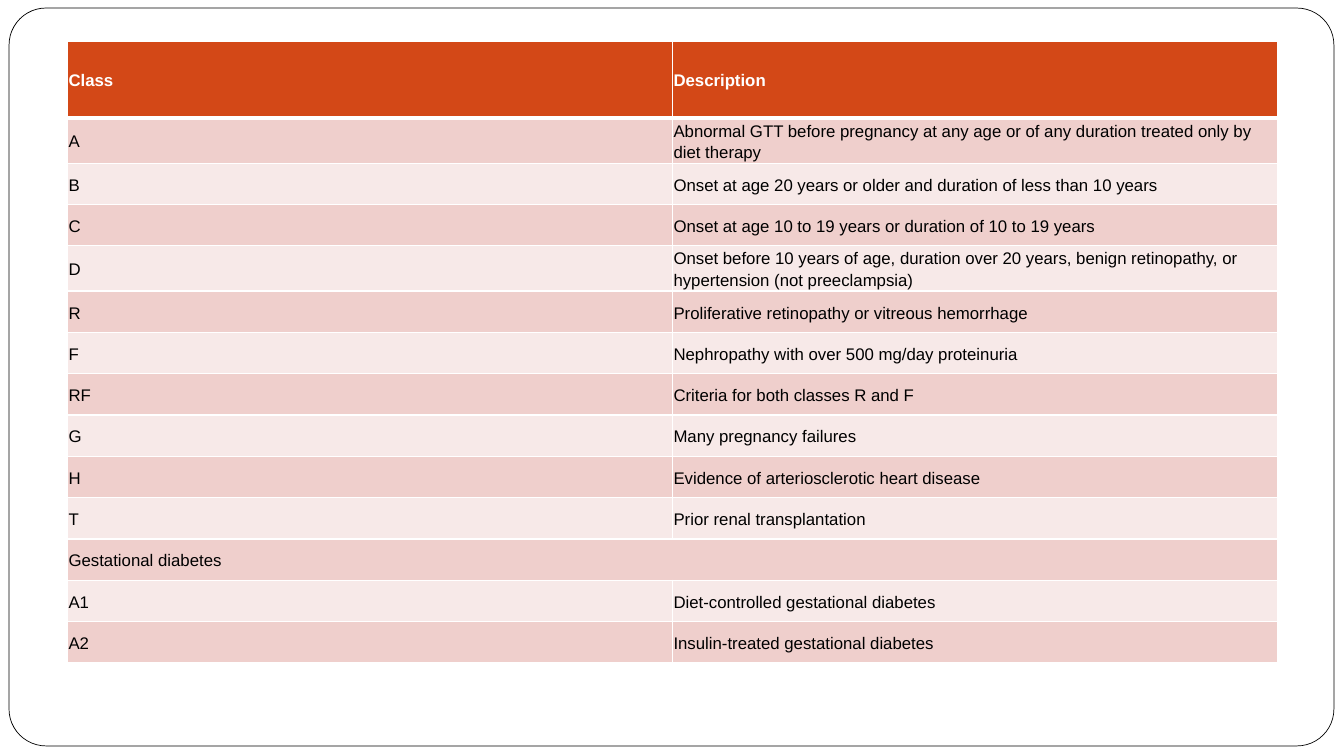
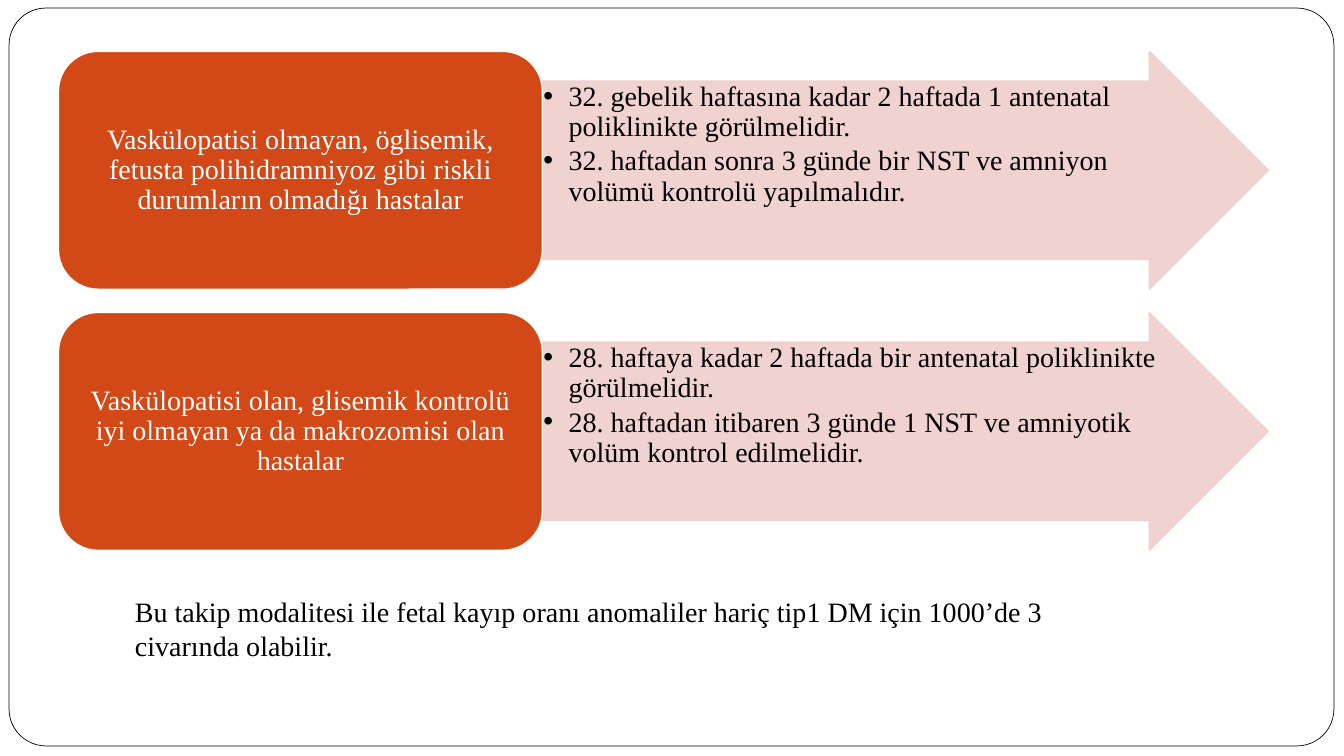
from lxml.etree import SubElement
from pptx import Presentation
from pptx.dml.color import RGBColor
from pptx.enum.shapes import MSO_SHAPE
from pptx.enum.text import MSO_ANCHOR, PP_ALIGN
from pptx.oxml.ns import qn
from pptx.util import Pt

PX = 9144  # EMU per px, 100 px to the inch
SLIDE_W, SLIDE_H = 1333, 750

ORANGE = RGBColor(0xD3, 0x48, 0x17)
PINK = RGBColor(0xEF, 0xCF, 0xCC)
PALE = RGBColor(0xF7, 0xE9, 0xE8)
WHITE = RGBColor(0xFF, 0xFF, 0xFF)
BLACK = RGBColor(0, 0, 0)
SANS, SERIF = "Arial", "Times New Roman"

HEADER = ("Class", "Description")
CLASSES = [
    ("A", "Abnormal GTT before pregnancy at any age or of any duration treated only by diet therapy"),
    ("B", "Onset at age 20 years or older and duration of less than 10 years"),
    ("C", "Onset at age 10 to 19 years or duration of 10 to 19 years"),
    ("D", "Onset before 10 years of age, duration over 20 years, benign retinopathy, "
          "or hypertension (not preeclampsia)"),
    ("R", "Proliferative retinopathy or vitreous hemorrhage"),
    ("F", "Nephropathy with over 500 mg/day proteinuria"),
    ("RF", "Criteria for both classes R and F"),
    ("G", "Many pregnancy failures"),
    ("H", "Evidence of arteriosclerotic heart disease"),
    ("T", "Prior renal transplantation"),
    ("Gestational diabetes",),
    ("A1", "Diet-controlled gestational diabetes"),
    ("A2", "Insulin-treated gestational diabetes"),
]

FOLLOW_UP = [
    ("Vaskülopatisi olmayan, öglisemik, fetusta polihidramniyoz gibi riskli "
     "durumların olmadığı hastalar",
     ["32. gebelik haftasına kadar 2 haftada 1 antenatal poliklinikte görülmelidir.",
      "32. haftadan sonra 3 günde bir NST ve amniyon volümü kontrolü yapılmalıdır."]),
    ("Vaskülopatisi olan, glisemik kontrolü iyi olmayan ya da makrozomisi olan hastalar",
     ["28. haftaya kadar 2 haftada bir antenatal poliklinikte görülmelidir.",
      "28. haftadan itibaren 3 günde 1 NST ve amniyotik volüm kontrol edilmelidir."]),
]
OUTCOME = ("Bu takip modalitesi ile fetal kayıp oranı anomaliler hariç tip1 DM için "
           "1000’de 3 civarında olabilir.")

TABLE_X, TABLE_Y, COL_W = 67, 41, 600
HEADER_H, ROW_H = 76, 41
GROUP_X, GROUP_Y, GROUP_H, GROUP_STEP = 58, 51, 236, 259
BOX_W, ARROW_W = 480, 720


def px(*lengths):
    return [n * PX for n in lengths]


def add_run(p, text, font, size, color, bold=False):
    r = p.add_run()
    r.text = text
    r.font.name, r.font.size, r.font.bold = font, Pt(size), bold
    r.font.color.rgb = color


def set_margins(target, x, y):
    target.margin_left = target.margin_right = x * PX
    target.margin_top = target.margin_bottom = y * PX


def add_shape(s, kind, box, fill, line, width):
    sp = s.shapes.add_shape(kind, *px(*box))
    sp.shadow.inherit = False
    sp.fill.solid()
    sp.fill.fore_color.rgb = fill
    sp.line.color.rgb = line
    sp.line.width = Pt(width)
    return sp


def add_frame(s, layout):
    """Draw the rounded page frame and hand it to the shared layout."""
    sp = add_shape(s, MSO_SHAPE.ROUNDED_RECTANGLE, (9, 8, 1314, 732), WHITE, BLACK, 0.5)
    sp.adjustments[0] = 0.05
    layout.shapes.element.insert(2, sp.element)


def set_borders(cell, top, bottom):
    tcPr = cell._tc.get_or_add_tcPr()
    for side, width in (("L", 1), ("R", 1), ("T", top), ("B", bottom)):
        ln = SubElement(tcPr, qn(f"a:ln{side}"), w=str(Pt(width)))
        SubElement(SubElement(ln, qn("a:solidFill")), qn("a:srgbClr"), val=str(WHITE))


def add_class_table(s):
    rows = [HEADER] + CLASSES
    size = (2 * COL_W, HEADER_H + ROW_H * len(CLASSES))
    table = s.shapes.add_table(len(rows), 2, *px(TABLE_X, TABLE_Y, *size)).table
    for i, row in enumerate(rows):
        header = i == 0
        table.rows[i].height = (HEADER_H if header else ROW_H) * PX
        if len(row) == 1:
            table.cell(i, 0).merge(table.cell(i, 1))
        for cell in table.rows[i].cells:
            set_borders(cell, 3 if i == 1 else 1, 3 if header else 1)
            cell.fill.solid()
            cell.fill.fore_color.rgb = ORANGE if header else (PALE, PINK)[i % 2]
            cell.vertical_anchor = MSO_ANCHOR.MIDDLE
            set_margins(cell, 1, 1)
        for j, text in enumerate(row):
            p = table.cell(i, j).text_frame.paragraphs[0]
            p.line_spacing = 1.15
            add_run(p, text, SANS, 12, WHITE if header else BLACK, header)
    for col in table.columns:
        col.width = COL_W * PX


def add_bullet(p):
    pPr = p._p.get_or_add_pPr()
    pPr.set("marL", str(25 * PX))
    pPr.set("indent", str(-25 * PX))
    SubElement(pPr, qn("a:buFont"), typeface=SANS)
    SubElement(pPr, qn("a:buChar"), char="•")


def add_arrow(s, y, items):
    sp = add_shape(s, MSO_SHAPE.RIGHT_ARROW, (GROUP_X + BOX_W, y, ARROW_W, GROUP_H),
                   PINK, PINK, 1)
    sp.adjustments[0], sp.adjustments[1] = 0.75, 0.5
    for color in sp.element.spPr.iter(qn("a:srgbClr")):
        SubElement(color, qn("a:alpha"), val="90000")
    tf = sp.text_frame
    tf.word_wrap, tf.vertical_anchor = True, MSO_ANCHOR.TOP
    set_margins(tf, 1, 1)
    for i, text in enumerate(items):
        p = tf.add_paragraph() if i else tf.paragraphs[0]
        p.alignment, p.line_spacing, p.space_after = PP_ALIGN.LEFT, 0.9, Pt(3)
        add_bullet(p)
        add_run(p, text, SERIF, 20, BLACK)


def add_patient_box(s, y, text):
    sp = add_shape(s, MSO_SHAPE.ROUNDED_RECTANGLE, (GROUP_X, y, BOX_W, GROUP_H),
                   ORANGE, WHITE, 1)
    tf = sp.text_frame
    tf.word_wrap, tf.vertical_anchor = True, MSO_ANCHOR.MIDDLE
    set_margins(tf, 8, 4)
    p = tf.paragraphs[0]
    p.alignment, p.line_spacing = PP_ALIGN.CENTER, 0.9
    add_run(p, text, SERIF, 20, WHITE)


def add_follow_up(s):
    for i, (patients, visits) in enumerate(FOLLOW_UP):
        y = GROUP_Y + i * GROUP_STEP
        add_arrow(s, y, visits)
        add_patient_box(s, y, patients)
    tf = s.shapes.add_textbox(*px(124, 585, 938, 108)).text_frame
    tf.word_wrap = True
    add_run(tf.paragraphs[0], OUTCOME, SERIF, 20, BLACK)


def main():
    prs = Presentation()
    prs.slide_width, prs.slide_height = px(SLIDE_W, SLIDE_H)
    layout = prs.slide_layouts[6]
    table_slide, follow_up_slide = [prs.slides.add_slide(layout) for _ in range(2)]
    add_frame(table_slide, layout)
    add_class_table(table_slide)
    add_follow_up(follow_up_slide)
    prs.save("out.pptx")


if __name__ == "__main__":
    main()
